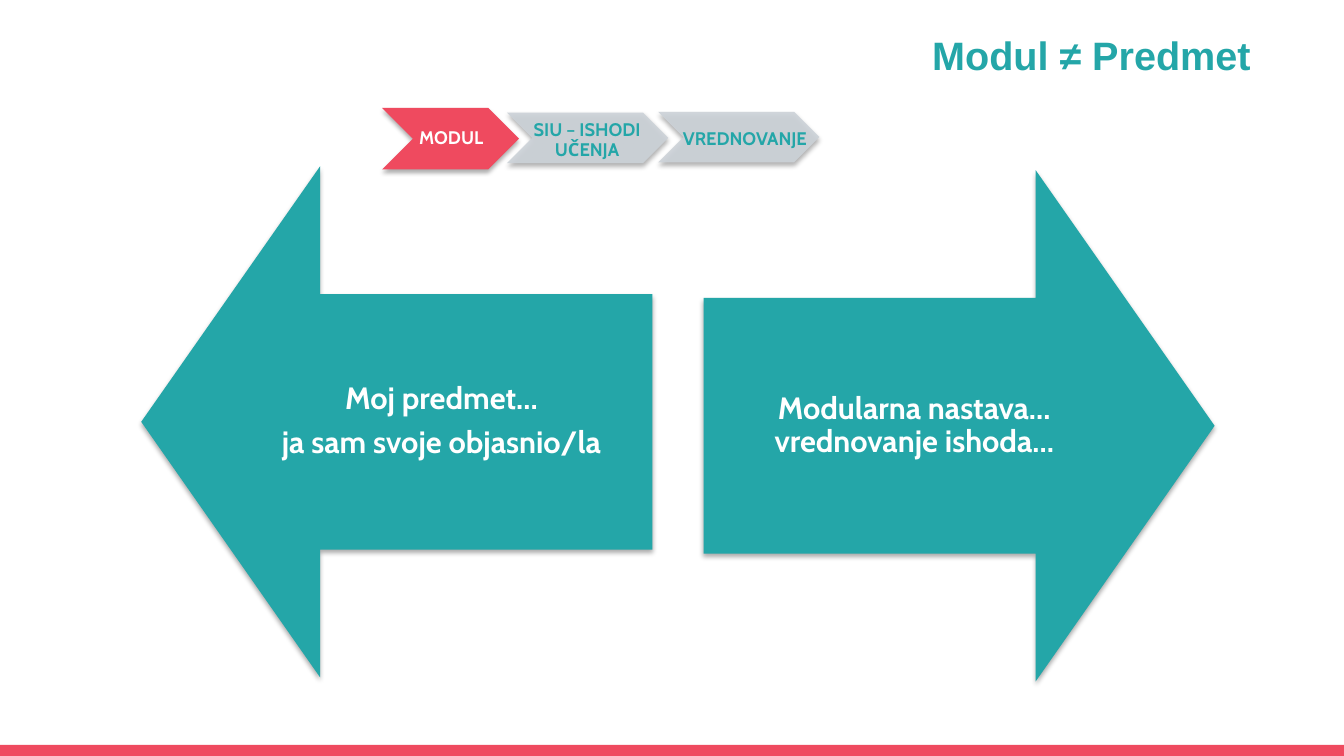
"""Build the slide contrasting a module with a school subject."""
from lxml.etree import SubElement
from pptx import Presentation
from pptx.dml.color import RGBColor
from pptx.enum.shapes import MSO_SHAPE
from pptx.enum.text import MSO_ANCHOR, MSO_AUTO_SIZE, PP_ALIGN
from pptx.oxml.ns import qn
from pptx.util import Cm, Pt

COLORS = {"teal": "24A6A8", "red": "EF4A5F", "gray": "CCD2D8",
          "white": "FFFFFF", "black": "000000"}
TITLE = "Modul ≠ Predmet"
ARROW_SIZE = 12.88
ARROWS = [
    {"kind": MSO_SHAPE.LEFT_ARROW, "left": 3.56, "top": 4.19,
     "lines": ["Moj predmet…", "ja sam svoje objasnio/la"]},
    {"kind": MSO_SHAPE.RIGHT_ARROW, "left": 17.73, "top": 4.29,
     "lines": ["Modularna nastava… vrednovanje ishoda…"]},
]
STEPS = [
    {"label": "MODUL", "fill": "red", "alpha": 100, "color": "white",
     "chevron": (9.63, 2.72, 3.45, 1.55), "text": (10.29, 2.72, 2.11, 1.55)},
    {"label": "SIU – ISHODI UČENJA", "fill": "gray", "alpha": 90, "color": "teal",
     "chevron": (12.78, 2.84, 4.06, 1.27), "text": (13.18, 3.05, 3.18, 0.99)},
    {"label": "VREDNOVANJE", "fill": "gray", "alpha": 90, "color": "teal",
     "chevron": (16.59, 2.82, 4.06, 1.27), "text": (16.99, 3.02, 3.51, 0.99)},
]
SLIDE_WIDTH, SLIDE_HEIGHT = 33.87, 19.05
BAR_HEIGHT = 0.28


def add_filled_shape(slide, kind, box, color, alpha=100, shadow=True):
    shape = slide.shapes.add_shape(kind, *map(Cm, box))
    shape.shadow.inherit = False
    shape.fill.solid()
    shape.fill.fore_color.rgb = RGBColor.from_string(COLORS[color])
    shape.line.fill.background()
    properties = shape.element.spPr
    if alpha < 100:
        fill_color = properties.find(qn("a:solidFill"))[0]
        SubElement(fill_color, qn("a:alpha"), val=str(alpha * 1000))
    if shadow:
        outer = SubElement(properties.find(qn("a:effectLst")), qn("a:outerShdw"),
                           blurRad=str(Pt(3.5)), dist=str(Pt(2.2)),
                           dir="5400000", rotWithShape="0")
        shadow_color = SubElement(outer, qn("a:srgbClr"), val=COLORS["black"])
        SubElement(shadow_color, qn("a:alpha"), val="32000")
    return shape


def write_text(shape, lines, font_name, size, color, insets, align=PP_ALIGN.CENTER):
    frame = shape.text_frame
    frame.word_wrap = True
    frame.auto_size = MSO_AUTO_SIZE.NONE
    frame.vertical_anchor = MSO_ANCHOR.MIDDLE
    (frame.margin_left, frame.margin_top,
     frame.margin_right, frame.margin_bottom) = map(Cm, insets)
    for index, line in enumerate(lines):
        paragraph = frame.add_paragraph() if index else frame.paragraphs[0]
        paragraph.alignment = align
        paragraph.line_spacing = 0.9
        paragraph.space_before = Pt(0)
        if index < len(lines) - 1:
            paragraph.space_after = Pt(size * 0.35)
        run = paragraph.add_run()
        run.text = line
        run.font.name = font_name
        run.font.size = Pt(size)
        run.font.bold = True
        run.font.color.rgb = RGBColor.from_string(COLORS[color])


def main():
    presentation = Presentation()
    presentation.slide_width = Cm(SLIDE_WIDTH)
    presentation.slide_height = Cm(SLIDE_HEIGHT)
    slide = presentation.slides.add_slide(presentation.slide_layouts[5])

    title = slide.shapes.title
    title.left, title.top, title.width, title.height = map(Cm, (23.24, 0.51, 8.66, 1.88))
    write_text(title, [TITLE], "Arial", 28.3, "teal",
               (0.25, 0.13, 0.25, 0.13), PP_ALIGN.LEFT)

    add_filled_shape(slide, MSO_SHAPE.RECTANGLE,
                     (0, SLIDE_HEIGHT - BAR_HEIGHT, SLIDE_WIDTH, BAR_HEIGHT),
                     "red", shadow=False)

    for arrow in ARROWS:
        box = (arrow["left"], arrow["top"], ARROW_SIZE, ARROW_SIZE)
        shape = add_filled_shape(slide, arrow["kind"], box, "teal")
        shape.adjustments[0] = 0.5
        shape.adjustments[1] = 0.35
        write_text(shape, arrow["lines"], "Cabin", 22, "white", (0.43,) * 4)

    for step in STEPS:
        add_filled_shape(slide, MSO_SHAPE.CHEVRON, step["chevron"],
                         step["fill"], step["alpha"])
        label = slide.shapes.add_textbox(*map(Cm, step["text"]))
        write_text(label, [step["label"]], "Cabin", 13, step["color"],
                   (0.05, 0.03, 0, 0.03))

    presentation.save("out.pptx")


if __name__ == "__main__":
    main()
